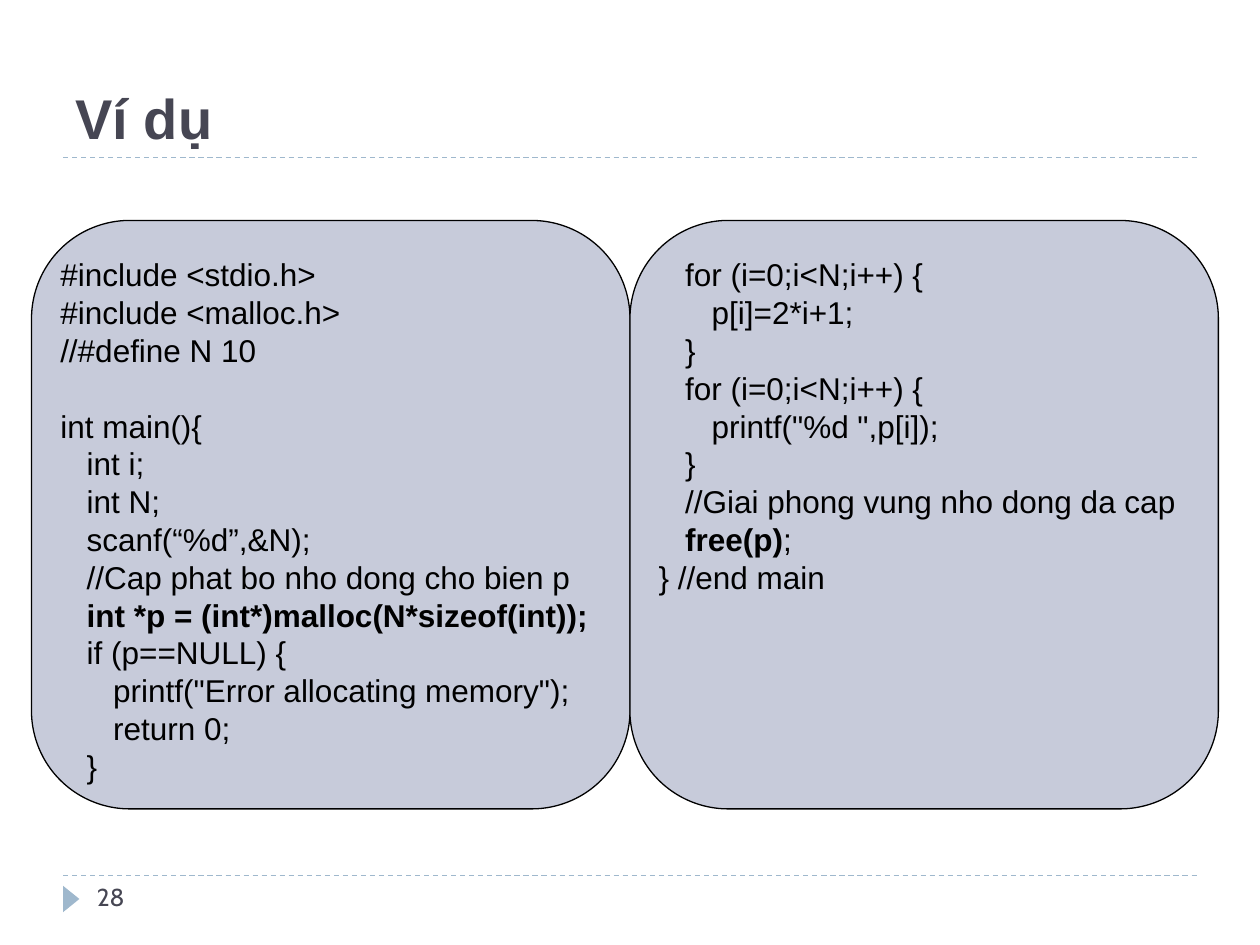
from dataclasses import dataclass

from lxml import etree
from pptx import Presentation
from pptx.dml.color import RGBColor
from pptx.enum.dml import MSO_LINE
from pptx.enum.shapes import MSO_CONNECTOR, MSO_SHAPE
from pptx.enum.text import MSO_ANCHOR, PP_ALIGN
from pptx.oxml.ns import qn
from pptx.util import Inches, Pt

DASH = MSO_LINE.DASH
STRAIGHT = MSO_CONNECTOR.STRAIGHT
ROUNDED, TRIANGLE = MSO_SHAPE.ROUNDED_RECTANGLE, MSO_SHAPE.ISOSCELES_TRIANGLE
TOP, BOTTOM = MSO_ANCHOR.TOP, MSO_ANCHOR.BOTTOM
LEFT = PP_ALIGN.LEFT


@dataclass(frozen=True)
class Theme:
    """Colours, fonts and sizes of the slide."""
    heading: RGBColor = RGBColor(0x46, 0x46, 0x53)
    accent: RGBColor = RGBColor(0x9F, 0xB8, 0xCD)
    panel: RGBColor = RGBColor(0xC7, 0xCB, 0xDA)
    ink: RGBColor = RGBColor(0, 0, 0)
    font: str = "Arial"
    number_font: str = "Cabin"
    title_size: int = 32
    code_size: int = 18
    number_size: int = 14
    line_width: float = 0.75
    code_pitch: float = 21.6
    code_indent: float = 0.21


THEME = Theme()
WIDTH, HEIGHT = 10, 7.5
MARGIN = 0.05 * WIDTH
RULES = (1.25, 6.95)
PANEL_TOP, PANEL_HEIGHT = 1.75, 4.67
MIDDLE = WIDTH / 2

# Each line of code is (indent level, text, bold text, closing text).
ALLOCATE = [
    (0, "#include <stdio.h>"),
    (0, "#include <malloc.h>"),
    (0, "//#define N 10"),
    (0, "int main(){"),
    (1, "int i;"),
    (1, "int N;"),
    (1, "scanf(“%d”,&N);"),
    (1, "//Cap phat bo nho dong cho bien p"),
    (1, "", "int *p = (int*)malloc(N*sizeof(int));"),
    (1, "if (p==NULL) {"),
    (2, 'printf("Error allocating memory");'),
    (2, "return 0;"),
    (1, "}"),
]
USE_AND_FREE = [
    (1, "for (i=0;i<N;i++) {"),
    (2, "p[i]=2*i+1;"),
    (1, "}"),
    (1, "for (i=0;i<N;i++) {"),
    (2, 'printf("%d ",p[i]);'),
    (1, "}"),
    (1, "//Giai phong vung nho dong da cap"),
    (1, "", "free(p)", ";"),
    (0, "} //end main"),
]


def style_span(span, font, size, color, bold=False):
    """Format one run of text."""
    span.font.name = font
    span.font.size = Pt(size)
    span.font.color.rgb = color
    span.font.bold = bold


def add_title(page, text):
    """Fill and place the title placeholder."""
    title = page.shapes.title
    title.left, title.top = Inches(MARGIN), Inches(0.25)
    title.width, title.height = Inches(WIDTH - 2 * MARGIN), Inches(1)
    frame = title.text_frame
    frame.text = text
    frame.vertical_anchor = BOTTOM
    para = frame.paragraphs[0]
    para.alignment = LEFT
    style_span(para.runs[0], THEME.font, THEME.title_size, THEME.heading, True)


def add_rule(page, top):
    """Draw a dashed line between the side margins."""
    rule = page.shapes.add_connector(
        STRAIGHT, Inches(MARGIN), Inches(top), Inches(WIDTH - MARGIN), Inches(top))
    rule.line.color.rgb = THEME.accent
    rule.line.width = Pt(THEME.line_width)
    rule.line.dash_style = DASH
    etree.SubElement(rule._element.spPr, qn("a:effectLst"))


def add_page_number(page, text):
    """Draw the footer arrow and the page number."""
    arrow = page.shapes.add_shape(
        TRIANGLE, Inches(0.46), Inches(7.07), Inches(0.21), Inches(0.13))
    arrow.rotation = 90
    arrow.shadow.inherit = False
    arrow.fill.solid()
    arrow.fill.fore_color.rgb = THEME.accent
    arrow.line.fill.background()
    box = page.shapes.add_textbox(
        Inches(0.67), Inches(RULES[1]), Inches(2.17), Inches(0.4))
    box.text_frame.word_wrap = True
    box.text_frame.text = text
    span = box.text_frame.paragraphs[0].runs[0]
    style_span(span, THEME.number_font, THEME.number_size, THEME.heading)


def add_code_line(para, level, *parts):
    """Write a line of code whose second part is bold."""
    para.alignment = LEFT
    para.line_spacing = Pt(THEME.code_pitch)
    margin = Inches(level * THEME.code_indent)
    para._p.get_or_add_pPr().set("marL", str(margin))
    for position, text in enumerate(parts):
        if text:
            span = para.add_run()
            span.text = text
            style_span(span, THEME.font, THEME.code_size, THEME.ink, position == 1)


def add_code_panel(page, left, width, lines, gap_before=None):
    """Draw a rounded panel of code, with a one-line gap before one line."""
    panel = page.shapes.add_shape(
        ROUNDED, Inches(left), Inches(PANEL_TOP), Inches(width), Inches(PANEL_HEIGHT))
    panel.adjustments[0] = 0.167
    panel.shadow.inherit = False
    panel.fill.solid()
    panel.fill.fore_color.rgb = THEME.panel
    panel.line.color.rgb = THEME.ink
    panel.line.width = Pt(THEME.line_width)
    frame = panel.text_frame
    frame.word_wrap = True
    frame.vertical_anchor = TOP
    frame.margin_left = frame.margin_right = 0
    for index, line in enumerate(lines):
        para = frame.add_paragraph() if index else frame.paragraphs[0]
        add_code_line(para, *line)
        if index == gap_before:
            para.space_before = Pt(THEME.code_pitch)


def main():
    """Build and save the slide."""
    deck = Presentation()
    deck.slide_width, deck.slide_height = Inches(WIDTH), Inches(HEIGHT)
    page = deck.slides.add_slide(deck.slide_layouts[5])
    for top in RULES:
        add_rule(page, top)
    add_title(page, "Ví dụ")
    add_page_number(page, "28")
    add_code_panel(page, 0.25, MIDDLE - 0.25, ALLOCATE, gap_before=3)
    add_code_panel(page, MIDDLE, PANEL_HEIGHT, USE_AND_FREE)
    deck.save("out.pptx")


if __name__ == "__main__":
    main()
